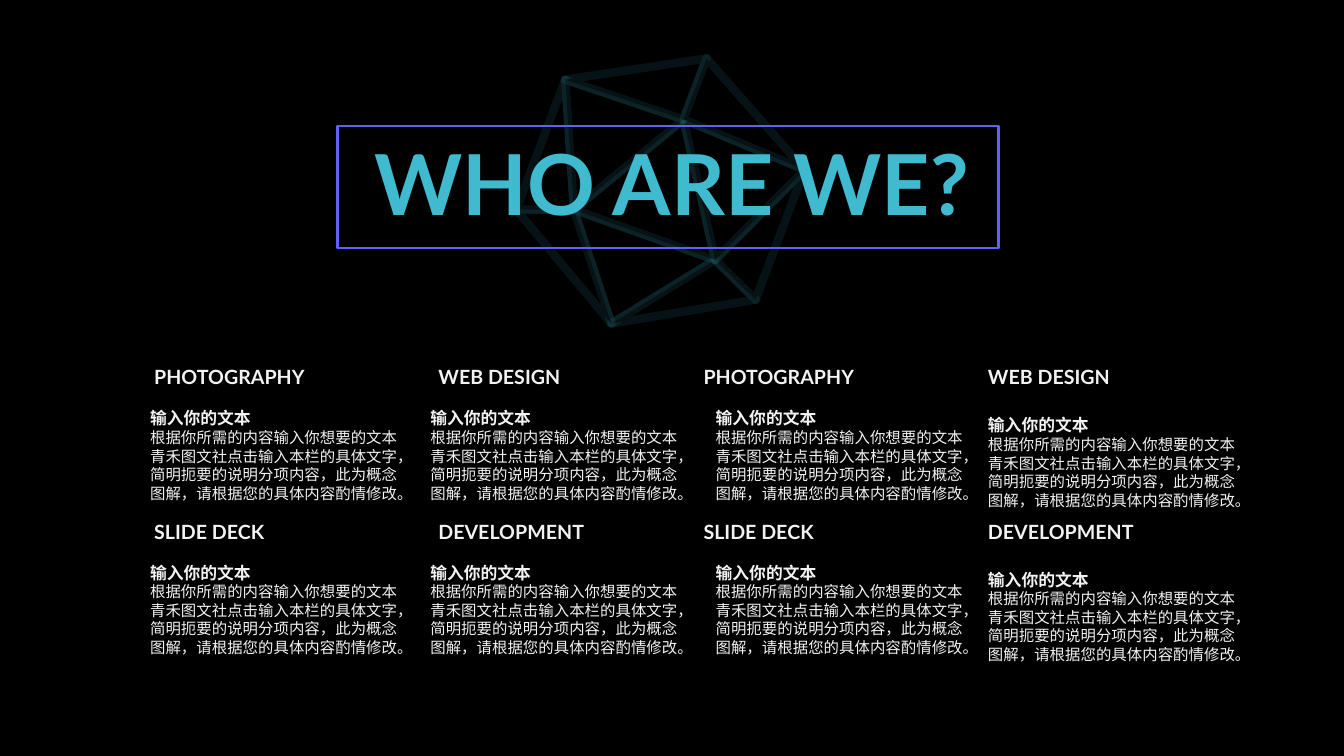
from lxml import etree
from pptx import Presentation
from pptx.dml.color import RGBColor
from pptx.enum.shapes import MSO_SHAPE as Shape
from pptx.enum.text import MSO_ANCHOR as Anchor, MSO_AUTO_SIZE as AutoSize, PP_ALIGN as Align
from pptx.oxml.ns import qn
from pptx.util import Inches, Pt

W, H = Inches(13.33), Inches(7.5)
COL, ROW = W / 100, H / 100
COLORS = {"background": "000000", "teal": "3FBACF", "violet": "615FFD", "light": "F2F2F2"}
LATIN, CHINESE = "Lato", "Noto Sans CJK SC"

VERTICES = {
    "A": (0.69, 0.76), "B": (0.33, 1), "C": (0.2, 0.57),
    "D": (0.83, 0.91), "E": (0, 0.57), "F": (1, 0.42),
    "G": (0.17, 0.08), "H": (0.58, 0.23), "I": (0.66, 0),
}
FACES = ["ABC", "BDA", "BEC", "DFA", "EGC", "ACH", "AFH", "CGH", "HIG", "HIF"]

SUBTITLE = "输入你的文本"
DETAILS = [
    "根据你所需的内容输入你想要的文本",
    "青禾图文社点击输入本栏的具体文字，简明扼要的说明分项内容，此为概念图解，请根据您的具体内容酌情修改。",
]
HEADINGS = [
    ["PHOTOGRAPHY", "WEB DESIGN", "PHOTOGRAPHY", "WEB DESIGN"],
    ["SLIDE DECK", "DEVELOPMENT", "SLIDE DECK", "DEVELOPMENT"],
]
HEADING_COLS = [10.73, 31.88, 51.61, 72.77]
BODY_COLS = [10.43, 31.28, 52.51, 72.77]
BODY_DROPS = [5.33, 5.33, 5.33, 6.27]
FIRST_ROW, ROW_PITCH = 48, 20.4


def color(name):
    return RGBColor.from_string(COLORS[name])


def place(col, row, cols, rows):
    return int(col * COL), int(row * ROW), int(cols * COL), int(rows * ROW)


def write(p, text, size=14, font=LATIN, tint="light", bold=True, spacing=None, align=Align.LEFT):
    p.alignment = align
    p.line_spacing = spacing
    r = p.add_run()
    r.text = text
    r.font.size, r.font.bold, r.font.name = Pt(size), bold, font
    r.font.color.rgb = color(tint)
    etree.SubElement(r.font._element, qn("a:ea"), typeface=font)


def add_text_box(slide, box):
    tf = slide.shapes.add_textbox(*box).text_frame
    tf.word_wrap = True
    return tf


def add_polyhedron(slide, box):
    left, top, width, height = box
    points = {k: (left + x * width, top + y * height) for k, (x, y) in VERTICES.items()}
    for face in FACES:
        first, *others = [points[k] for k in face]
        builder = slide.shapes.build_freeform(*first)
        builder.add_line_segments(others, close=True)
        sp = builder.convert_to_shape()
        sp.shadow.inherit = False
        sp.fill.solid()
        sp.fill.fore_color.rgb = color("background")
        sp.line.width = Pt(6)
        sp.line.color.rgb = color("teal")
        ln = sp.line._get_or_add_ln()
        etree.SubElement(ln.find(".//" + qn("a:srgbClr")), qn("a:alpha"), val="10000")
        etree.SubElement(ln, qn("a:round"))


def add_title(slide, box):
    title = slide.shapes.title
    title.left, title.top, title.width, title.height = box
    tf = title.text_frame
    tf.word_wrap, tf.auto_size, tf.vertical_anchor = True, AutoSize.NONE, Anchor.TOP
    write(tf.paragraphs[0], "WHO ARE WE?", size=60, tint="teal", spacing=0.9, align=Align.CENTER)
    slide.shapes._spTree.append(title._element)


def add_frame(slide, box):
    sp = slide.shapes.add_shape(Shape.RECTANGLE, *box)
    sp.shadow.inherit = False
    sp.fill.background()
    sp.line.color.rgb = color("violet")
    sp.line.width = Pt(2)


def add_heading(slide, box, text):
    write(add_text_box(slide, box).paragraphs[0], text, spacing=0.9)


def add_body(slide, box):
    tf = add_text_box(slide, box)
    tf.auto_size = AutoSize.SHAPE_TO_FIT_TEXT
    write(tf.paragraphs[0], SUBTITLE, size=12, font=CHINESE)
    for text in DETAILS:
        write(tf.add_paragraph(), text, size=11, font=CHINESE, bold=False)


def add_services(slide):
    for i, headings in enumerate(HEADINGS):
        row = FIRST_ROW + i * ROW_PITCH
        for text, heading_col, body_col, drop in zip(headings, HEADING_COLS, BODY_COLS, BODY_DROPS):
            add_heading(slide, place(heading_col, row, 18.9, 5.33), text)
            add_body(slide, place(body_col, row + drop, 20.33, 16.4))


def main():
    prs = Presentation()
    prs.slide_width, prs.slide_height = W, H
    slide = prs.slides.add_slide(prs.slide_layouts[5])
    slide.background.fill.solid()
    slide.background.fill.fore_color.rgb = color("background")
    add_polyhedron(slide, place(38.41, 7.73, 21.46, 35.07))
    add_title(slide, place(13.2, 18.27, 73.52, 14.67))
    add_frame(slide, place(25.13, 16.67, 49.14, 16.13))
    add_services(slide)
    prs.save("out.pptx")


if __name__ == "__main__":
    main()
